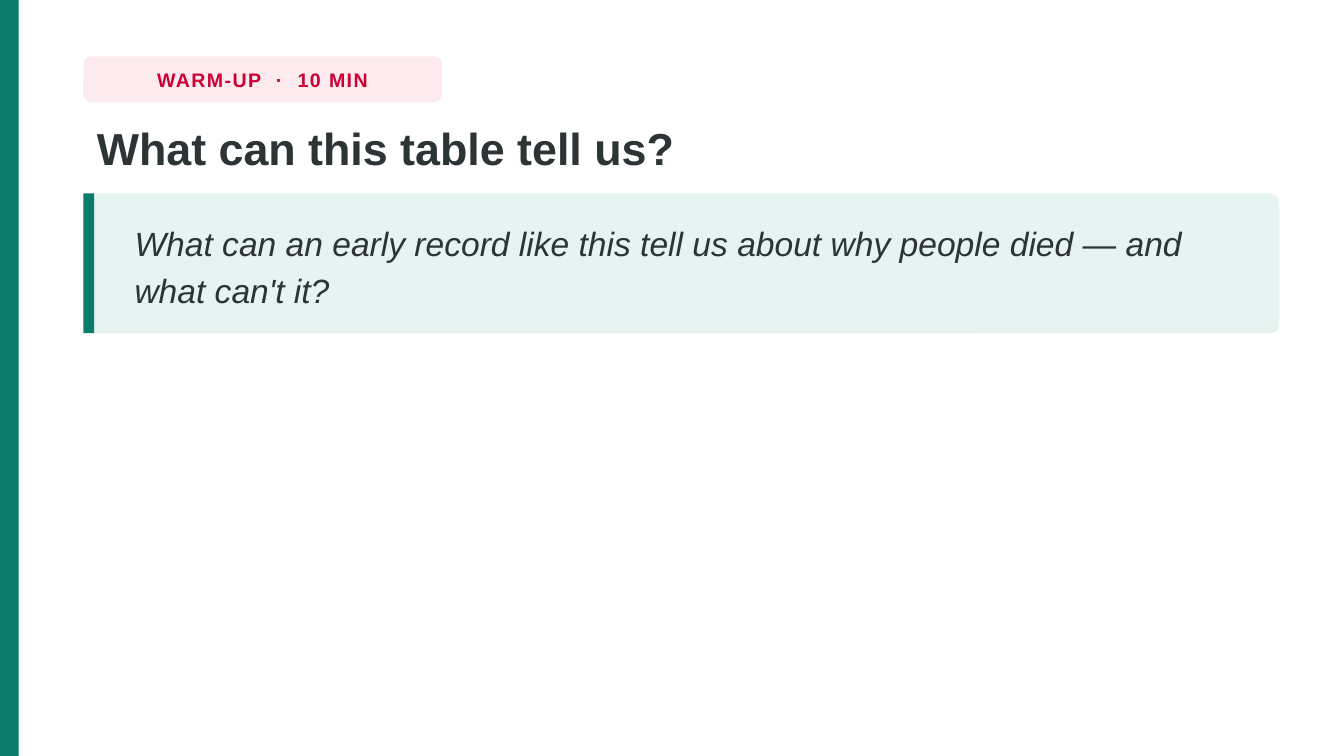
from pptx import Presentation
from pptx.dml.color import RGBColor
from pptx.enum import shapes, text
from pptx.util import Pt

INK = {"teal": "0B7B6B", "mint": "E6F3F0", "rose": "FDEAEF", "red": "CC0033",
       "dark": "2D3436", "white": "FFFFFF"}
WIDE, HIGH = 720, 405
LEFT, SPAN = 44.64, 640.8
CARD_TOP, CARD_HIGH = 103.68, 74.88
RADIUS = 5

TAG = "WARM-UP  ·  10 MIN"
TITLE = "What can this table tell us?"
QUOTE = ("What can an early record like this tell us about why people died "
         "— and what can't it?")


def put(slide, box, fill, radius=0):
    """Add a plain or rounded block and return it."""
    kind = shapes.MSO_SHAPE.ROUNDED_RECTANGLE if radius else shapes.MSO_SHAPE.RECTANGLE
    block = slide.shapes.add_shape(kind, *map(Pt, box))
    if radius:
        block.adjustments[0] = radius / min(box[2:])
    block.shadow.inherit = False
    block.fill.solid()
    block.fill.fore_color.rgb = RGBColor.from_string(INK[fill])
    block.line.fill.background()
    return block


def write(shape, words, size, ink, align, anchor, pad, gap=None, **style):
    """Fill a shape with one styled paragraph and return its run."""
    frame = shape.text_frame
    frame.text = words
    frame.word_wrap = True
    frame.auto_size = text.MSO_AUTO_SIZE.NONE
    frame.vertical_anchor = anchor
    frame.margin_left = frame.margin_right = Pt(pad)
    frame.margin_top = frame.margin_bottom = Pt(3.6)
    para = frame.paragraphs[0]
    para.alignment = align
    para.line_spacing = gap
    run = para.runs[0]
    run.font.name = "Arial"
    run.font.size = Pt(size)
    run.font.color.rgb = RGBColor.from_string(INK[ink])
    for key, value in style.items():
        setattr(run.font, key, value)
    return run


def main():
    """Build the warm-up slide."""
    deck = Presentation()
    deck.slide_width, deck.slide_height = Pt(WIDE), Pt(HIGH)
    slide = deck.slides.add_slide(deck.slide_layouts[5])
    slide.background.fill.solid()
    slide.background.fill.fore_color.rgb = RGBColor.from_string(INK["white"])
    side, mid = text.PP_ALIGN, text.MSO_ANCHOR

    title = slide.shapes.title
    title.left, title.top = Pt(LEFT), Pt(60.48)
    title.width, title.height = Pt(SPAN), Pt(40.32)
    write(title, TITLE, 24, "dark", side.LEFT, mid.TOP, 7.2, 1.02, bold=True)

    put(slide, (0, 0, 10, HIGH), "teal")
    pill = put(slide, (LEFT, 30.24, 192.24, 24.48), "rose", 4.3)
    run = write(pill, TAG, 10.5, "red", side.CENTER, mid.MIDDLE, 7.2, bold=True)
    run.font._element.set("spc", "80")

    card = put(slide, (LEFT, CARD_TOP, SPAN, CARD_HIGH), "mint", RADIUS)
    write(card, QUOTE, 18, "dark", side.LEFT, mid.MIDDLE, 26, 1.16, italic=True)
    put(slide, (LEFT, CARD_TOP, 5.76, CARD_HIGH), "teal")
    deck.save("out.pptx")


if __name__ == "__main__":
    main()
